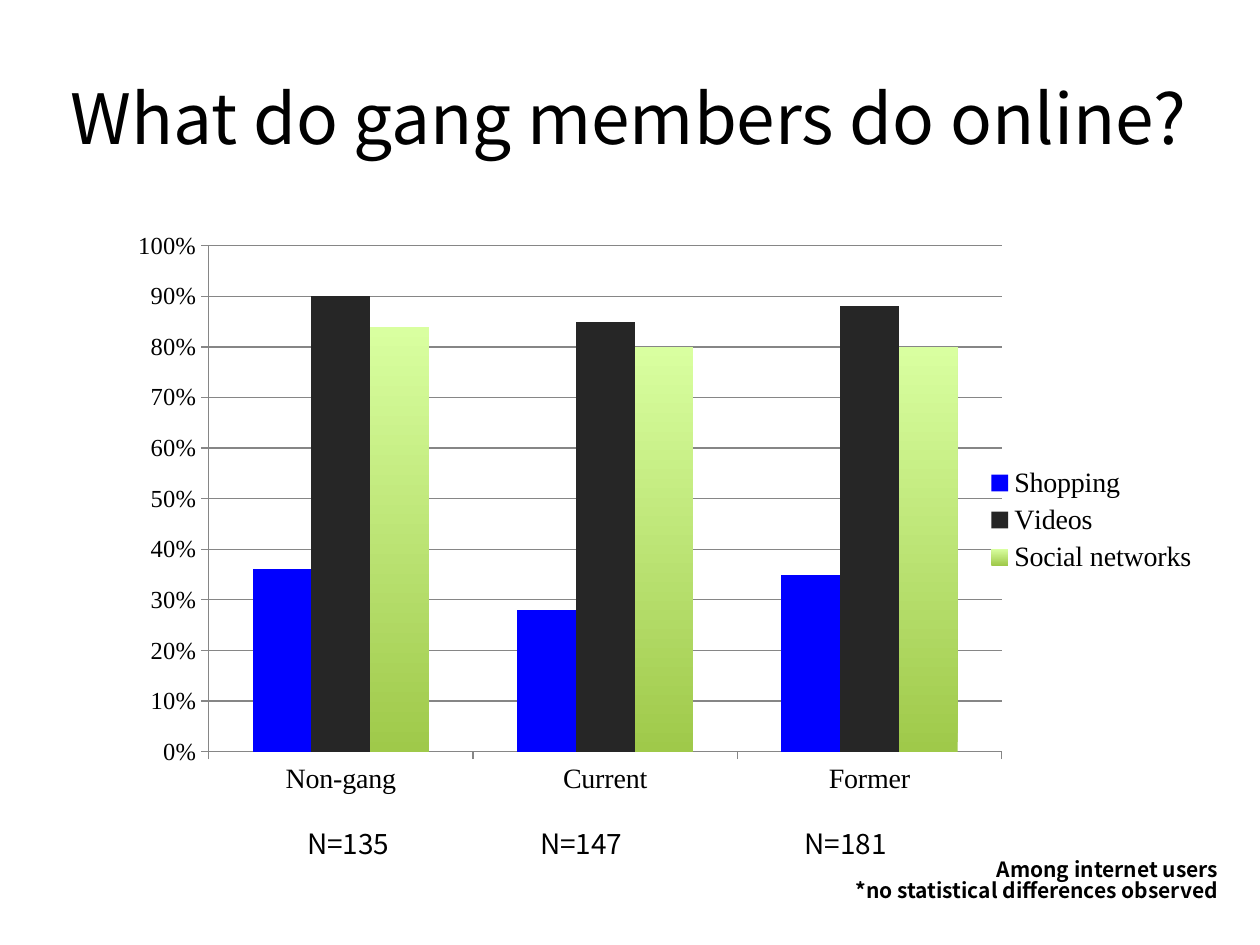
from lxml.etree import SubElement as Sub
from pptx import Presentation
from pptx.chart.data import CategoryChartData as Data
from pptx.dml.color import RGBColor as Rgb
from pptx.enum.chart import XL_CHART_TYPE as Kind, XL_LEGEND_POSITION as Side, XL_TICK_MARK as Tick
from pptx.enum.text import MSO_ANCHOR as Anchor, PP_ALIGN as Align
from pptx.oxml import parse_xml
from pptx.oxml.ns import nsdecls, qn
from pptx.util import Cm, Pt

HUE = {"ink": "000000", "axis": "868686", "shop": "0000FF", "video": "262626",
       "pale": "D9FFA0", "green": "9FC94A"}
SANS = "Noto Sans CJK JP"
SERIF = "Times New Roman"


def style(font, name, size, bold=False):
    font.name = name
    font.size = Pt(size)
    font.bold = bold
    font.color.rgb = Rgb.from_string(HUE["ink"])


def add_box(left, top, width, height, lines, anchor, space):
    frame = slide.shapes.add_textbox(Cm(left), Cm(top), Cm(width), Cm(height)).text_frame
    frame.word_wrap = True
    frame.vertical_anchor = anchor
    for i, (text, size, bold, align) in enumerate(lines):
        para = frame.add_paragraph() if i else frame.paragraphs[0]
        para.alignment = align
        para.line_spacing = space
        run = para.add_run()
        run.text = text
        style(run.font, SANS, size, bold)
    return frame


prs = Presentation()
prs.slide_width, prs.slide_height = Cm(25.4), Cm(19.05)
slide = prs.slides.add_slide(prs.slide_layouts[6])

add_box(0.53, 0.76, 24.28, 3.18,
        [("What do gang members do online?", 39.6, False, Align.CENTER)], Anchor.MIDDLE, 1.0)

notes = add_box(5.94, 16.64, 18.87, 2.06, [
    ("N=135\tN=147\tN=181", 16, False, Align.LEFT),
    ("Among internet users", 12, True, Align.RIGHT),
    ("*no statistical differences observed", 12, True, Align.RIGHT),
], Anchor.TOP, 0.85)
tabs = Sub(notes.paragraphs[0]._p.get_or_add_pPr(), qn("a:tabLst"))
for stop in (4.7, 10.03):
    Sub(tabs, qn("a:tab"), pos=str(Cm(stop)), algn="l")

data = Data(number_format="0%")
data.categories = ["Non-gang", "Current", "Former"]
data.add_series("Shopping", [0.36, 0.28, 0.35])
data.add_series("Videos", [0.9, 0.85, 0.88])
data.add_series("Social networks", [0.84, 0.8, 0.8])
chart = slide.shapes.add_chart(Kind.COLUMN_CLUSTERED, Cm(2.21), Cm(4.34),
                               Cm(22.2), Cm(12.29), data).chart
style(chart.font, "Calibri", 10)
chart.has_title = False
chart.has_legend = True
chart.legend.position = Side.RIGHT
chart.legend.include_in_layout = False
style(chart.legend.font, SERIF, 16)

plot = chart.plots[0]
plot.gap_width = 150
plot.overlap = 0
plot.vary_by_categories = False
for bar, key in zip(plot.series, ("shop", "video", "green")):
    fill = bar.format.fill
    if key == "green":
        fill.gradient()
        fill.gradient_angle = 90
        for stop, tone in zip(fill.gradient_stops, (key, "pale")):
            stop.color.rgb = Rgb.from_string(HUE[tone])
    else:
        fill.solid()
        fill.fore_color.rgb = Rgb.from_string(HUE[key])

rows = chart.value_axis
rows.minimum_scale, rows.maximum_scale, rows.major_unit = 0, 1, 0.1
rows.has_major_gridlines = True
rows.tick_labels.number_format = "0%"
rows.tick_labels.number_format_is_linked = False
for axis, size in ((chart.category_axis, 16), (rows, 14)):
    style(axis.tick_labels.font, SERIF, size)
    axis.major_tick_mark = Tick.OUTSIDE
    axis.minor_tick_mark = Tick.NONE
for part in (chart.category_axis, rows, rows.major_gridlines):
    part.format.line.color.rgb = Rgb.from_string(HUE["axis"])
    part.format.line.width = Pt(0.75)

area = chart._chartSpace.chart.plotArea
for old in area.findall(qn("c:layout")):
    area.remove(old)
spot = {"x": 0.09, "y": 0.05, "w": 0.72, "h": 0.83}
area.insert(0, parse_xml(
    f'<c:layout {nsdecls("c")}><c:manualLayout><c:layoutTarget val="inner"/>'
    '<c:xMode val="edge"/><c:yMode val="edge"/>'
    + "".join(f'<c:{key} val="{val}"/>' for key, val in spot.items())
    + "</c:manualLayout></c:layout>"))

prs.save("out.pptx")
